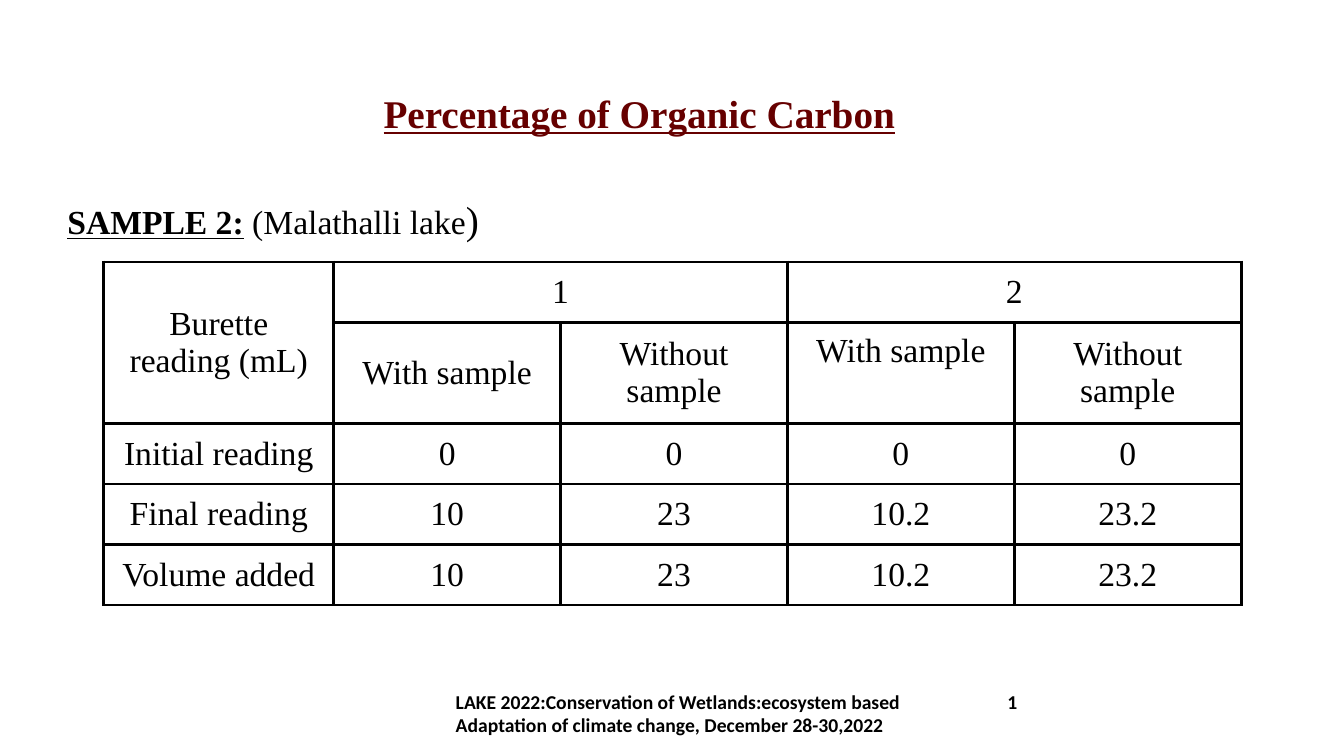
import pptx
import pptx.dml.color
import pptx.enum.text
import pptx.oxml
import pptx.oxml.ns
import pptx.util
from lxml import etree

Inches, Pt = pptx.util.Inches, pptx.util.Pt
ALIGN, ANCHOR = pptx.enum.text.PP_ALIGN, pptx.enum.text.MSO_ANCHOR
qn = pptx.oxml.ns.qn
SERIF, SANS = "Times New Roman", "Calibri"
BLACK, MAROON = "000000", "660000"

READINGS = [
    ["Burette\nreading (mL)", "1", "", "2", ""],
    ["", "With sample", "Without sample", "With sample", "Without sample"],
    ["Initial reading", "0", "0", "0", "0"],
    ["Final reading", "10", "23", "10.2", "23.2"],
    ["Volume added", "10", "23", "10.2", "23.2"],
]


def style(font, size, name=SERIF, color=BLACK, bold=False, underline=False):
    font.size, font.name = Pt(size), name
    font.bold, font.underline = bold, underline
    font.color.rgb = pptx.dml.color.RGBColor.from_string(color)


def set_margins(target, size=0.1):
    target.margin_left = target.margin_right = Inches(size)
    target.margin_top = target.margin_bottom = Inches(size)


def add_text_box(slide, box):
    tf = slide.shapes.add_textbox(*map(Inches, box)).text_frame
    tf.word_wrap = True
    set_margins(tf)
    return tf


def add_title(slide, box):
    title = slide.shapes.title
    title.left, title.top, title.width, title.height = map(Inches, box)
    tf = title.text_frame
    tf.text = "Percentage of Organic Carbon"
    tf.vertical_anchor = ANCHOR.MIDDLE
    p = tf.paragraphs[0]
    p.alignment, p.line_spacing = ALIGN.CENTER, 0.9
    style(p.font, 28, color=MAROON, bold=True, underline=True)


def add_sample_heading(slide, box):
    p = add_text_box(slide, box).paragraphs[0]
    for text, size, strong in (("SAMPLE 2:", 24, True),
                               (" (Malathalli lake", 24, False),
                               (")", 28, False)):
        r = p.add_run()
        r.text = text
        style(r.font, size, bold=strong, underline=strong)


def add_borders(cell, width=2.25):
    tc_pr = cell._tc.get_or_add_tcPr()
    for side in ("lnL", "lnR", "lnT", "lnB"):
        line = etree.SubElement(tc_pr, qn(f"a:{side}"), w=str(Pt(width)))
        fill = etree.SubElement(line, qn("a:solidFill"))
        etree.SubElement(fill, qn("a:srgbClr"), val=BLACK)


def add_readings_table(slide, left, top):
    widths, heights = [2.28] + [2.25] * 4, [0.6, 1.0] + [0.6] * 3
    box = (left, top, sum(widths), sum(heights))
    table = slide.shapes.add_table(len(heights), len(widths), *map(Inches, box)).table
    table.first_row = table.horz_banding = False
    for column, width in zip(table.columns, widths):
        column.width = Inches(width)
    for row, height in zip(table.rows, heights):
        row.height = Inches(height)
    for i, texts in enumerate(READINGS):
        for j, text in enumerate(texts):
            cell = table.cell(i, j)
            add_borders(cell)
            cell.fill.background()
            set_margins(cell)
            cell.vertical_anchor = ANCHOR.MIDDLE
            cell.text = text
            for p in cell.text_frame.paragraphs:
                p.alignment = ALIGN.CENTER
                style(p.font, 24)
    table.cell(1, 3).vertical_anchor = ANCHOR.TOP
    table.cell(0, 0).merge(table.cell(1, 0))
    for j in (1, 3):
        table.cell(0, j).merge(table.cell(0, j + 1))


def add_footer(slide, box, indent=3.5, number_tab=5.47):
    tf = add_text_box(slide, box)
    tf.margin_left = Inches(0.1 + indent)
    tf.text = ("LAKE 2022:Conservation of Wetlands:ecosystem based\t1\n"
               "Adaptation of climate change, December 28-30,2022")
    tabs = etree.SubElement(tf.paragraphs[0]._p.get_or_add_pPr(), qn("a:tabLst"))
    etree.SubElement(tabs, qn("a:tab"), pos=str(Inches(number_tab)), algn="l")
    for p in tf.paragraphs:
        style(p.font, 14, SANS, bold=True)


def main():
    prs = pptx.Presentation()
    prs.slide_width, prs.slide_height = Inches(13.33), Inches(7.5)
    slide = prs.slides.add_slide(prs.slide_layouts[5])
    add_sample_heading(slide, (0.57, 1.84, 11.22, 0.67))
    add_footer(slide, (0.92, 6.74, 12.28, 0.76))
    add_readings_table(slide, 1.03, 2.6)
    add_title(slide, (3.34, 0.63, 6, 1.04))
    prs.save("out.pptx")


if __name__ == "__main__":
    main()
